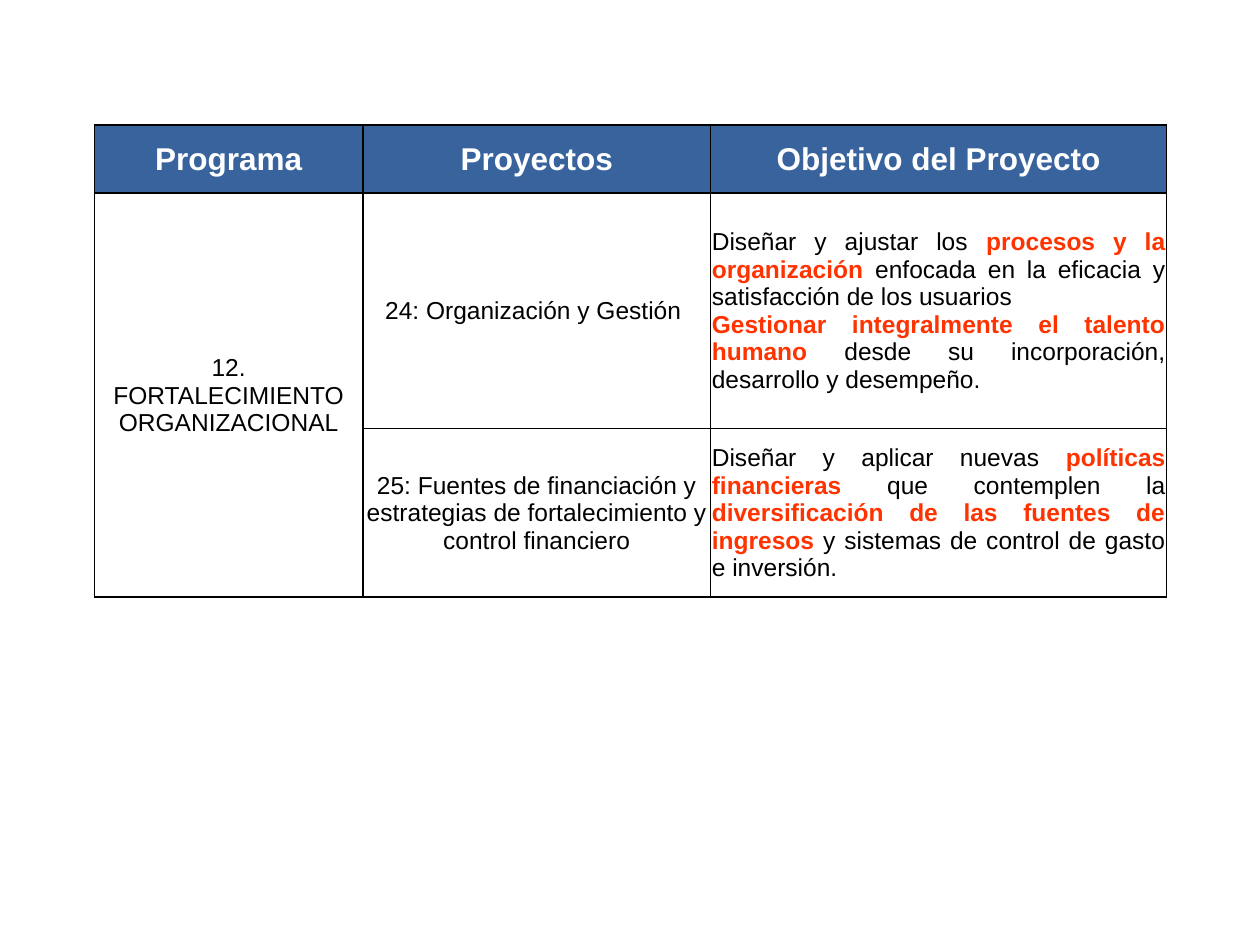
"""Build a slide with a table of programme, projects and goals."""
from lxml import etree
from pptx import Presentation
from pptx.dml.color import RGBColor
from pptx.enum.text import MSO_ANCHOR, PP_ALIGN
from pptx.oxml.ns import qn
from pptx.util import Inches, Pt

MIDDLE = MSO_ANCHOR.MIDDLE
CENTER, JUSTIFY = PP_ALIGN.CENTER, PP_ALIGN.JUSTIFY
BLUE, RED, BLACK, WHITE = "38639D", "FF3300", "000000", "FFFFFF"
LEFT, TOP = 0.75, 0.99
COLS = [2.13, 2.76, 3.62]
ROWS = [0.54, 1.87, 1.34]
HEAD = ["Programa", "Proyectos", "Objetivo del Proyecto"]
BODY = [
    ["12. FORTALECIMIENTO ORGANIZACIONAL",
     "24: Organización y Gestión ",
     "Diseñar y ajustar los *procesos y la organización* enfocada en la "
     "eficacia y satisfacción de los usuarios\n"
     "*Gestionar integralmente el talento humano *desde su incorporación, "
     "desarrollo y desempeño."],
    ["",
     "25: Fuentes de financiación y estrategias de fortalecimiento y "
     "control financiero",
     "Diseñar y aplicar nuevas *políticas financieras *que contemplen la "
     "*diversificación de las fuentes de ingresos *y sistemas de control "
     "de gasto e inversión. "],
]


def color(code):
    return RGBColor.from_string(code)


def write(frame, text, size=14, ink=BLACK, bold=False, align=CENTER):
    for i, line in enumerate(text.split("\n")):
        para = frame.add_paragraph() if i else frame.paragraphs[0]
        para.alignment = align
        for j, part in enumerate(line.split("*")):
            if part:
                run = para.add_run()
                run.text = part
                strong = j % 2 == 1
                run.font.name = "Arial"
                run.font.size = Pt(size)
                run.font.bold = bold or strong
                run.font.color.rgb = color(RED if strong else ink)


def border(cell):
    props = cell._tc.get_or_add_tcPr()
    for side in ("lnL", "lnR", "lnT", "lnB"):
        line = etree.SubElement(props, qn("a:" + side), w=str(Pt(1)))
        fill = etree.SubElement(line, qn("a:solidFill"))
        etree.SubElement(fill, qn("a:srgbClr"), val=BLACK)


def style(cell, back):
    cell.vertical_anchor = MIDDLE
    cell.margin_left = cell.margin_right = cell.margin_top = Inches(0.01)
    cell.margin_bottom = 0
    border(cell)
    cell.fill.solid()
    cell.fill.fore_color.rgb = color(back)


def main():
    deck = Presentation()
    deck.slide_width, deck.slide_height = Inches(10), Inches(7.5)
    slide = deck.slides.add_slide(deck.slide_layouts[6])
    table = slide.shapes.add_table(
        len(ROWS), len(COLS), Inches(LEFT), Inches(TOP),
        Inches(sum(COLS)), Inches(sum(ROWS))).table
    for col, width in zip(table.columns, COLS):
        col.width = Inches(width)
    for row, height in zip(table.rows, ROWS):
        row.height = Inches(height)
    for r, texts in enumerate([HEAD] + BODY):
        for c, text in enumerate(texts):
            cell = table.cell(r, c)
            style(cell, WHITE if r else BLUE)
            if r == 0:
                write(cell.text_frame, text, size=18, ink=WHITE, bold=True)
            else:
                write(cell.text_frame, text, align=JUSTIFY if c == 2 else CENTER)
    table.cell(1, 0).merge(table.cell(2, 0))
    deck.save("out.pptx")


if __name__ == "__main__":
    main()
